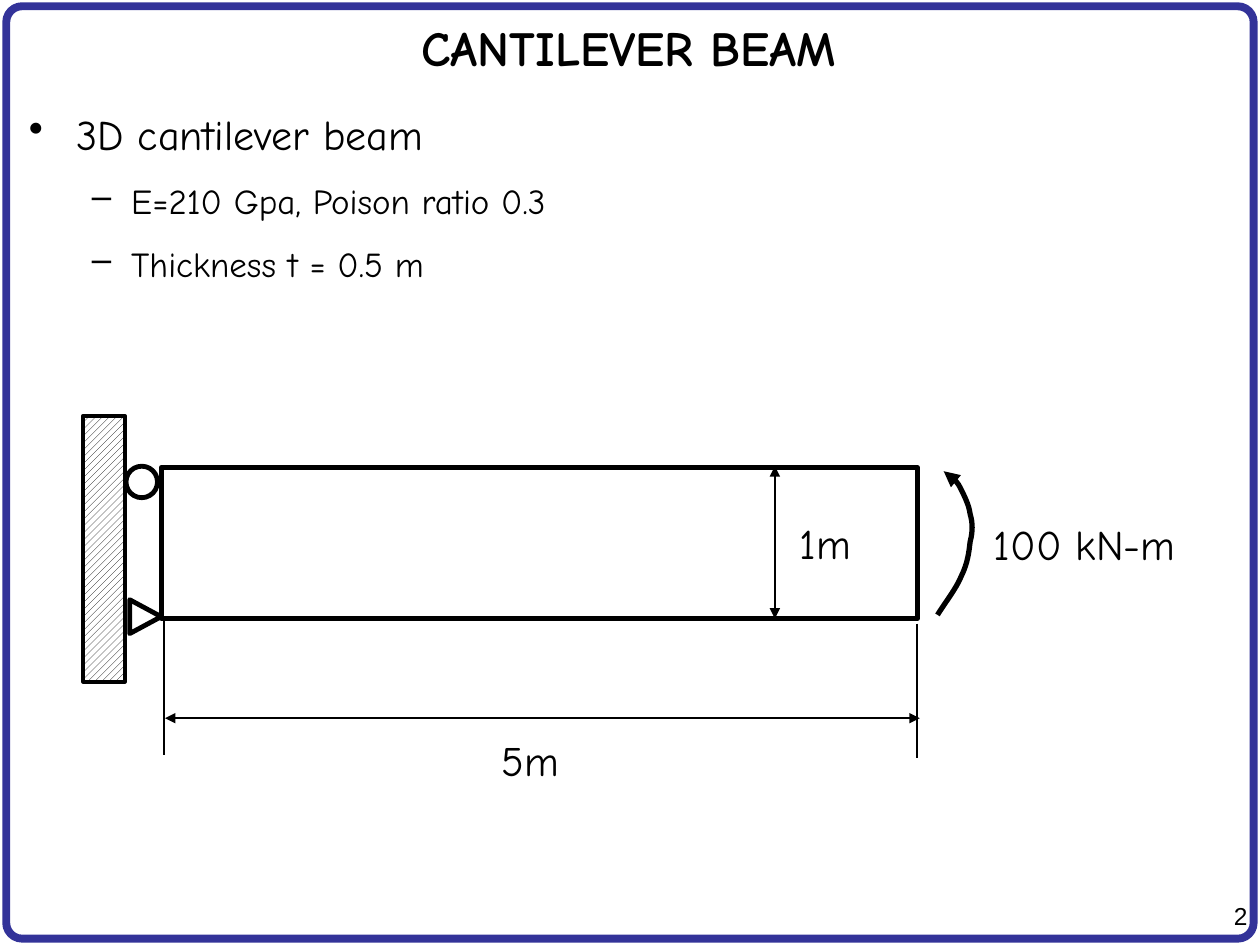
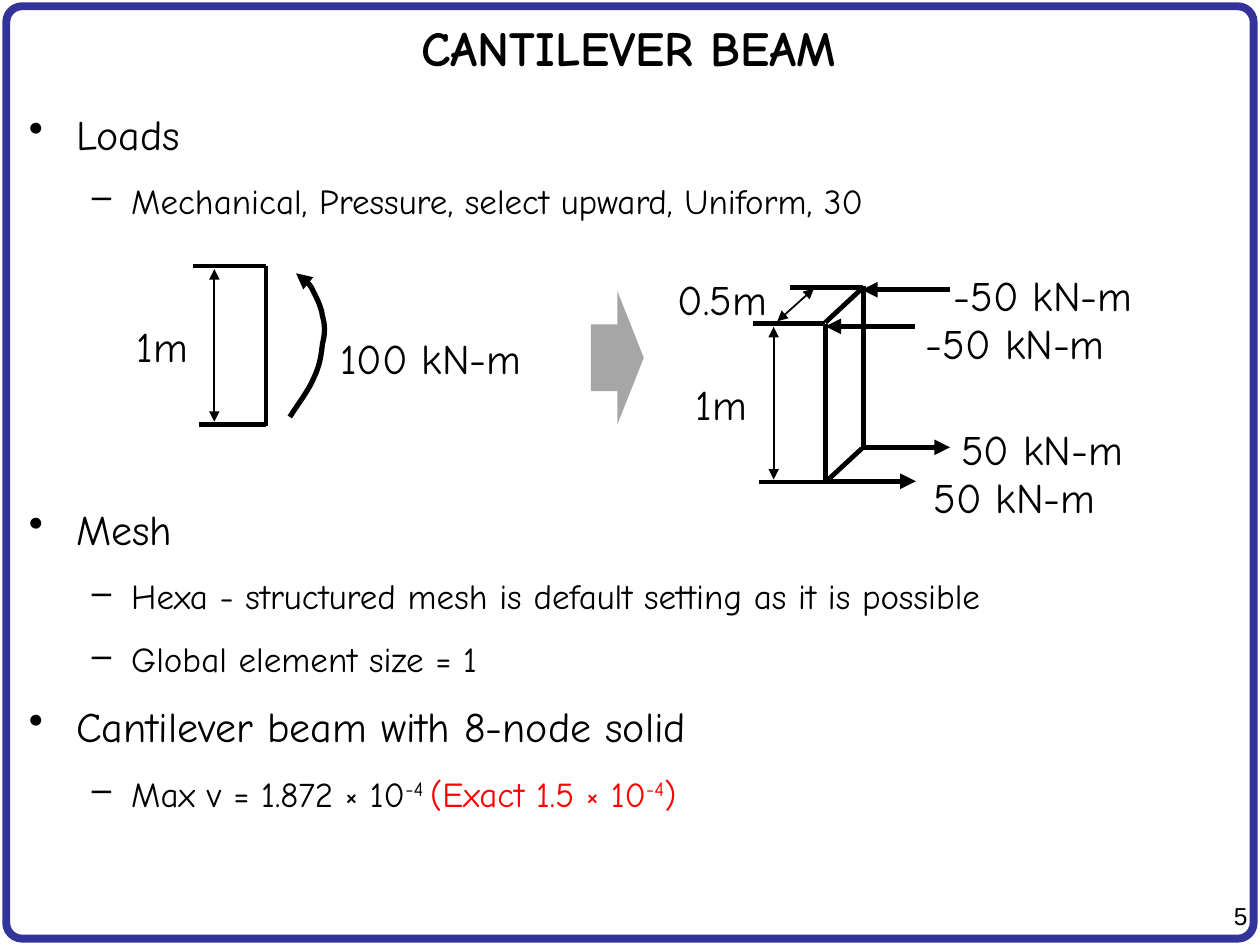
from dataclasses import dataclass

import pptx
import pptx.dml.color
import pptx.enum.dml
import pptx.enum.shapes
import pptx.enum.text
import pptx.oxml.xmlchemy
import pptx.util

Pt = pptx.util.Pt
Shape = pptx.enum.shapes.MSO_SHAPE
Align = pptx.enum.text.PP_ALIGN
AutoSize = pptx.enum.text.MSO_AUTO_SIZE


@dataclass(frozen=True)
class Theme:
    ink: str = "000000"
    paper: str = "FFFFFF"
    frame: str = "333399"
    accent: str = "FF0000"
    arrow: str = "A6A6A6"
    font: str = "Comic Neue"
    number_font: str = "Arial"
    title_size: float = 28
    head_size: float = 24
    sub_size: float = 20
    number_size: float = 14
    thin: float = 1
    edge: float = 2.75
    heavy: float = 3


MOMENT_START = (0, 82.1)
MOMENT_CURVES = [
    [(5, 74.2), (10.8, 67), (13.7, 59.8)],
    [(17.3, 52.6), (18, 46.1), (18.7, 40.3)],
    [(20.2, 34.6), (20.2, 29.5), (18.7, 24.5)],
    [(18, 18.7), (14.4, 12.2), (12.2, 7.9)],
    [(9.4, 3.6), (6.5, 2.2), (3.6, 0)],
]
CURVE_STEPS = 8


def moment_points():
    points = [MOMENT_START]
    for bend_out, bend_in, end in MOMENT_CURVES:
        corners = (points[-1], bend_out, bend_in, end)
        for step in range(1, CURVE_STEPS + 1):
            t = step / CURVE_STEPS
            weights = ((1 - t) ** 3, 3 * t * (1 - t) ** 2, 3 * t * t * (1 - t), t ** 3)
            points.append(tuple(
                sum(weight * corner[axis] for weight, corner in zip(weights, corners))
                for axis in (0, 1)
            ))
    return points


def color(code):
    return pptx.dml.color.RGBColor.from_string(code)


def add_element(parent, tag, **attributes):
    element = pptx.oxml.xmlchemy.OxmlElement(tag)
    for name, value in attributes.items():
        element.set(name, str(value))
    parent.append(element)


class Sketch:
    def __init__(self, deck, theme):
        self.deck = deck
        self.theme = theme
        self.page = None

    def start_page(self, title, number):
        theme = self.theme
        self.page = self.deck.slides.add_slide(self.deck.slide_layouts[5])
        self.shape(Shape.ROUNDED_RECTANGLE, 3.6, 3.6, 712.8, 532.8,
                   width=4.5, ink=theme.frame).adjustments[0] = 0.017
        box = self.page.shapes.title
        box.left, box.top, box.width, box.height = map(Pt, (2.9, 3.6, 712.8, 46.8))
        frame = box.text_frame
        frame.auto_size = AutoSize.NONE
        frame.vertical_anchor = pptx.enum.text.MSO_ANCHOR.MIDDLE
        para = frame.paragraphs[0]
        para.alignment = Align.CENTER
        self.span(para, title, theme.title_size).font.bold = True
        para = self.text_box(681.1, 511.2, 38.9, 23.8).paragraphs[0]
        para.alignment = Align.RIGHT
        self.span(para, str(number), theme.number_size, font=theme.number_font)

    def span(self, para, text, size, ink=None, font=None, raised=False):
        span = para.add_run()
        span.text = text
        span.font.size = Pt(size)
        span.font.name = font or self.theme.font
        span.font.color.rgb = color(ink or self.theme.ink)
        if raised:
            span.font._element.set("baseline", "30000")
        return span

    def text_box(self, left, top, width, height, wrap=True):
        frame = self.page.shapes.add_textbox(*map(Pt, (left, top, width, height))).text_frame
        frame.word_wrap = wrap
        return frame

    def label(self, text, left, top, width):
        frame = self.text_box(left, top, width, 36, wrap=False)
        frame.auto_size = AutoSize.SHAPE_TO_FIT_TEXT
        self.span(frame.paragraphs[0], text, self.theme.head_size)

    def bullets(self, items):
        frame = self.text_box(9.4, 58.3, 701.3, 462.2)
        for index, (level, before, spans) in enumerate(items):
            para = frame.paragraphs[0] if index == 0 else frame.add_paragraph()
            para.level = level
            para.space_before = Pt(before)
            margin, indent, mark, size = (
                (27, -27, "•", self.theme.head_size),
                (58.5, -22.5, "–", self.theme.sub_size),
            )[level]
            properties = para._p.get_or_add_pPr()
            properties.set("marL", str(Pt(margin)))
            properties.set("indent", str(Pt(indent)))
            add_element(properties, "a:buChar", char=mark)
            for text, options in spans:
                self.span(para, text, size, **options)

    def outline(self, shape, width, ink=None, head=False, tail=False):
        shape.line.width = Pt(width)
        shape.line.color.rgb = color(ink or self.theme.ink)
        line = shape.line._get_or_add_ln()
        for tag, wanted in (("a:headEnd", head), ("a:tailEnd", tail)):
            if wanted:
                add_element(line, tag, type="triangle")

    def shape(self, kind, left, top, width_box, height, width=None, ink=None, fill=None):
        shape = self.page.shapes.add_shape(kind, *map(Pt, (left, top, width_box, height)))
        shape.shadow.inherit = False
        if fill:
            shape.fill.solid()
            shape.fill.fore_color.rgb = color(fill)
        else:
            shape.fill.background()
        if width:
            self.outline(shape, width, ink)
        else:
            shape.line.fill.background()
        return shape

    def hatch(self, shape):
        shape.fill.patterned()
        shape.fill.pattern = pptx.enum.dml.MSO_PATTERN.WIDE_UPWARD_DIAGONAL
        shape.fill.fore_color.rgb = color(self.theme.ink)
        shape.fill.back_color.rgb = color(self.theme.paper)

    def line(self, x1, y1, x2, y2, width, head=False, tail=False):
        line = self.page.shapes.add_connector(
            pptx.enum.shapes.MSO_CONNECTOR.STRAIGHT, *map(Pt, (x1, y1, x2, y2)))
        self.outline(line, width, head=head, tail=tail)
        add_element(line._element.spPr, "a:effectLst")

    def dimension(self, x1, y1, x2, y2):
        self.line(x1, y1, x2, y2, self.theme.thin, head=True, tail=True)

    def edge(self, x1, y1, x2, y2):
        self.line(x1, y1, x2, y2, self.theme.edge)

    def force(self, x, y, reach):
        self.line(x, y, x + reach, y, self.theme.heavy, tail=True)

    def moment(self, left, top):
        points = [(Pt(left + x), Pt(top + y)) for x, y in moment_points()]
        builder = self.page.shapes.build_freeform(*points[0])
        builder.add_line_segments(points[1:], close=False)
        curve = builder.convert_to_shape()
        curve.shadow.inherit = False
        curve.fill.background()
        self.outline(curve, self.theme.heavy, tail=True)

    def measured_end(self, x, y):
        self.edge(x, y, x, y + 91.4)
        self.edge(x, y + 90.4, x - 38, y + 90.4)
        self.edge(x, y, x - 41.5, y)
        self.dimension(x - 29.5, y + 1.8, x - 29.5, y + 89)
        self.label("1m", x - 81, y + 27.7, 43.9)


def head(text, before=12):
    return 0, before, [(text, {})]


def sub(*spans):
    return 1, 12, [span if isinstance(span, tuple) else (span, {}) for span in spans]


def draw_beam(sketch):
    theme = sketch.theme
    sketch.start_page("CANTILEVER BEAM", 2)
    sketch.bullets([
        head("3D cantilever beam"),
        sub("E=210 Gpa, Poison ratio 0.3"),
        sub("Thickness t = 0.5 m"),
    ])
    sketch.shape(Shape.RECTANGLE, 92.2, 267.1, 432, 86.4, theme.edge)
    sketch.line(93.6, 354.2, 93.6, 431.3, theme.thin)
    sketch.line(524.2, 356.4, 524.2, 433.4, theme.thin)
    sketch.dimension(94.3, 410.4, 525.6, 410.4)
    sketch.dimension(442.8, 266.4, 442.8, 353.5)
    sketch.label("1m", 450, 292.3, 43.9)
    sketch.label("5m", 279.4, 416.2, 48.2)
    sketch.label("100 kN-m", 560.9, 293, 123.1)
    sketch.moment(535.7, 269.3)
    sketch.shape(Shape.ISOSCELES_TRIANGLE, 73.4, 343.4, 19.4, 18, theme.edge).rotation = 90
    sketch.shape(Shape.OVAL, 72, 266.4, 18, 18, theme.edge)
    sketch.hatch(sketch.shape(Shape.RECTANGLE, 47.5, 237.6, 23.8, 151.9, 2.25))


def draw_loads(sketch):
    sketch.start_page("CANTILEVER BEAM", 5)
    red = {"ink": sketch.theme.accent}
    sketch.bullets([
        head("Loads"),
        sub("Mechanical, Pressure, select upward, Uniform, 30"),
        head("Mesh", before=161),
        sub("Hexa - structured mesh is default setting as it is possible"),
        sub("Global element size = 1"),
        head("Cantilever beam with 8-node solid"),
        sub("Max v = 1.872 × 10", ("-4 ", {"raised": True}), ("(Exact 1.5 × 10", red),
            ("-4", {"raised": True, **red}), (")", red)),
    ])
    sketch.label("100 kN-m", 187.2, 186.5, 123.1)
    sketch.moment(165.6, 156.2)
    sketch.measured_end(152, 152)
    sketch.shape(Shape.RIGHT_ARROW, 337.7, 166.3, 30.2, 76.3, fill=sketch.theme.arrow)
    sketch.measured_end(471.6, 185)
    sketch.edge(493.2, 164.2, 451.4, 164.2)
    sketch.edge(492.5, 164.9, 471.6, 184.3)
    sketch.edge(492.5, 256.3, 473, 274.3)
    sketch.edge(493.2, 163.4, 493.2, 256.3)
    sketch.dimension(465.1, 164.9, 444.2, 183.6)
    sketch.label("0.5m", 380.2, 152.6, 69.1)
    for text, x, y, reach, left, top, width in [
        ("-50 kN-m", 522.7, 186.5, -51.1, 522, 177.8, 122.4),
        ("-50 kN-m", 542.9, 165.6, -50.4, 537.8, 150.5, 122.4),
        ("50 kN-m", 472.3, 275, 51.1, 526.3, 265.7, 112.3),
        ("50 kN-m", 491.8, 255.6, 51.1, 542.2, 238.3, 112.3),
    ]:
        sketch.force(x, y, reach)
        sketch.label(text, left, top, width)


def main():
    deck = pptx.Presentation()
    deck.slide_width, deck.slide_height = Pt(720), Pt(540)
    sketch = Sketch(deck, Theme())
    draw_beam(sketch)
    draw_loads(sketch)
    deck.save("out.pptx")


if __name__ == "__main__":
    main()
